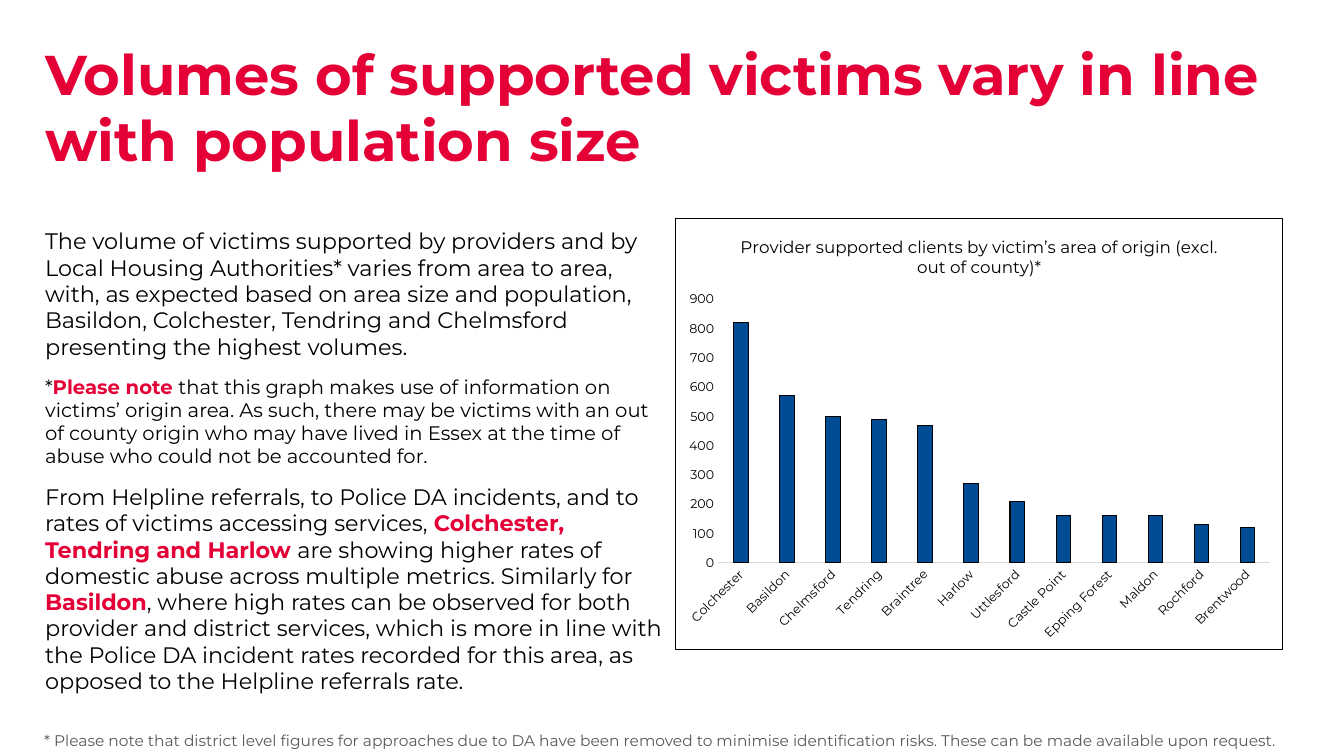
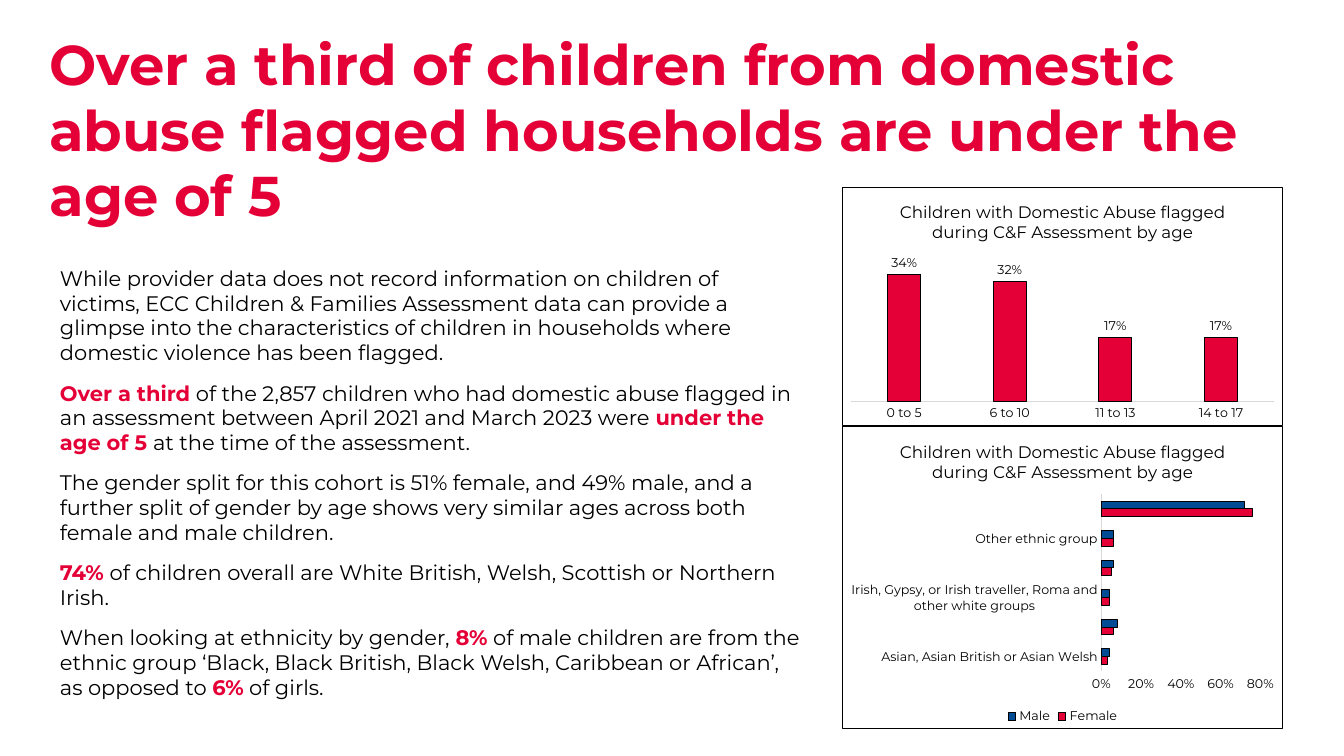
"""Build two slides on supported victims and children, each with text and charts."""
from lxml import etree
from pptx import Presentation
from pptx import util as u
from pptx.chart.data import CategoryChartData
from pptx.dml.color import RGBColor
from pptx.enum import chart as ch
from pptx.enum import text as tx
from pptx.oxml import parse_xml
from pptx.oxml.ns import nsdecls, qn

PX = 9525
RED = RGBColor(0xE4, 0x00, 0x37)
BLUE = RGBColor(0x00, 0x4C, 0x94)
BLACK = RGBColor(0x00, 0x00, 0x00)
GREY = RGBColor(0x59, 0x59, 0x59)
PALE = RGBColor(0xD9, 0xD9, 0xD9)
FONT = "Montserrat"
MARK = "|"

COLUMN = ch.XL_CHART_TYPE.COLUMN_CLUSTERED
BAR = ch.XL_CHART_TYPE.BAR_CLUSTERED
CHILD_TITLE = "Children with Domestic Abuse flagged during C&F Assessment by age"

SLIDES = [
    {
        "title": "Volumes of supported victims vary in line with population size",
        "title_box": (43, 41, 1164, 136),
        "body_box": (43, 218, 593, 238),
        "body_inset": (0, 0),
        "body": [
            (16, "The volume of victims supported by providers and by Local Housing "
                 "Authorities* varies from area to area, with, as expected based on area "
                 "size and population, Basildon, Colchester, Tendring and Chelmsford "
                 "presenting the highest volumes."),
            (14, "*|Please note |that this graph makes use of information on victims’ "
                 "origin area. As such, there may be victims with an out of county origin "
                 "who may have lived in Essex at the time of abuse who could not be "
                 "accounted for."),
            (16, "From Helpline referrals, to Police DA incidents, and to rates of victims "
                 "accessing services, |Colchester, Tendring and Harlow |are showing higher "
                 "rates of domestic abuse across multiple metrics. Similarly for "
                 "|Basildon|, where high rates can be observed for both provider and "
                 "district services, which is more in line with the Police DA incident "
                 "rates recorded for this area, as opposed to the Helpline referrals rate."),
        ],
        "note": "* Please note that district level figures for approaches due to DA have "
                "been removed to minimise identification risks. These can be made available "
                "upon request.",
        "charts": [
            {
                "kind": COLUMN, "box": (643, 208, 579, 411),
                "title": "Provider supported clients by victim’s area of origin (excl. out "
                         "of county)*",
                "categories": ["Colchester", "Basildon", "Chelmsford", "Tendring",
                               "Braintree", "Harlow", "Uttlesford", "Castle Point",
                               "Epping Forest", "Maldon", "Rochford", "Brentwood"],
                "series": [("Clients", BLUE, (820, 570, 500, 490, 470, 270,
                                              210, 160, 160, 160, 130, 120))],
                "format": "General", "gap": 219, "overlap": -27,
                "scale": (900, 100), "axis": True, "labels": False, "legend": False,
            },
        ],
    },
    {
        "title": "Over a third of children from domestic abuse flagged households are "
                 "under the age of 5",
        "title_box": (47, 31, 1210, 189),
        "body_box": (47, 249, 728, 422),
        "body_inset": (10, 5),
        "body": [
            (15, "While provider data does not record information on children of victims, "
                 "ECC Children & Families Assessment data can provide a glimpse into the "
                 "characteristics of children in households where domestic violence has "
                 "been flagged."),
            (15, "|Over a third| of the 2,857 children who had domestic abuse flagged in an "
                 "assessment between April 2021 and March 2023 were |under the age of 5 |at "
                 "the time of the assessment."),
            (15, "The gender split for this cohort is 51% female, and 49% male, and a "
                 "further split of gender by age shows very similar ages across both female "
                 "and male children."),
            (15, "|74% |of children overall are White British, Welsh, Scottish or Northern "
                 "Irish."),
            (15, "When looking at ethnicity by gender, |8%| of male children are from the "
                 "ethnic group ‘Black, Black British, Black Welsh, Caribbean or African’, "
                 "as opposed to |6%| of girls."),
        ],
        "note": None,
        "charts": [
            {
                "kind": COLUMN, "box": (802, 178, 420, 228), "title": CHILD_TITLE,
                "categories": ["0 to 5", "6 to 10", "11 to 13", "14 to 17"],
                "series": [("Children", RED, (0.34, 0.32, 0.17, 0.17))],
                "format": "0%", "gap": 219, "overlap": -27,
                "scale": (0.4, 0.1), "axis": False, "labels": True, "legend": False,
            },
            {
                "kind": BAR, "box": (802, 406, 420, 288), "title": CHILD_TITLE,
                "categories": ["Asian, Asian British or Asian Welsh",
                               "Black, Black British, Black Welsh, Cairbbean or African",
                               "Irish, Gypsy, or Irish traveller, Roma and other white groups",
                               "No Data / Not Recorded", "Other ethnic group",
                               "White English, Welsh, Scottish, Northern Irish or British"],
                "series": [("Female", RED, (0.03, 0.06, 0.04, 0.05, 0.06, 0.76)),
                           ("Male", BLUE, (0.04, 0.08, 0.04, 0.06, 0.06, 0.72))],
                "format": "0%", "gap": 182, "overlap": 0,
                "scale": (0.8, 0.2), "axis": True, "labels": False, "legend": True,
            },
        ],
    },
]
NOTE_BOX = (32, 692, 1225, 28)


def px(values):
    return [value * PX for value in values]


def apply(target, values):
    for name, value in values.items():
        setattr(target, name, value)


def style_font(font, size, color=BLACK, bold=False):
    apply(font, {"name": FONT, "size": u.Pt(size), "bold": bold})
    font.color.rgb = color


def style_line(line, color):
    line.color.rgb = color
    line.width = u.Pt(0.75)


def place(box, bounds, inset=(0, 0)):
    apply(box, dict(zip(("left", "top", "width", "height"), px(bounds))))
    across, down = px(inset)
    apply(box.text_frame, {
        "margin_left": across, "margin_right": across,
        "margin_top": down, "margin_bottom": down, "word_wrap": True,
        "auto_size": tx.MSO_AUTO_SIZE.NONE, "vertical_anchor": tx.MSO_ANCHOR.TOP})


def write(para, content, size, color=BLACK, bold=False, after=0):
    properties = para._p.get_or_add_pPr()
    apply_xml = {"marL": "0", "indent": "0"}
    for name, value in apply_xml.items():
        properties.set(name, value)
    etree.SubElement(properties, qn("a:buNone"))
    apply(para, {"alignment": tx.PP_ALIGN.LEFT, "line_spacing": 0.98,
                 "space_before": u.Pt(0), "space_after": u.Pt(after)})
    for index, part in enumerate(content.split(MARK)):
        if part:
            span = para.add_run()
            span.text = part
            accent = index % 2 == 1
            style_font(span.font, size, RED if accent else color, bold or accent)


def add_chart(page, data):
    source = CategoryChartData(number_format=data["format"])
    source.categories = data["categories"]
    for name, _, values in data["series"]:
        source.add_series(name, values)
    chart = page.shapes.add_chart(data["kind"], *px(data["box"]), source).chart
    style_font(chart.font, 9)
    frame = chart.chart_title.text_frame
    frame.text = data["title"]
    style_font(frame.paragraphs[0].runs[0].font, 12)
    chart.chart_title.include_in_layout = False

    chart.has_legend = data["legend"]
    if data["legend"]:
        apply(chart.legend, {"position": ch.XL_LEGEND_POSITION.BOTTOM,
                             "include_in_layout": False})
        style_font(chart.legend.font, 9)

    for axis in (chart.category_axis, chart.value_axis):
        apply(axis, {"has_major_gridlines": False,
                     "major_tick_mark": ch.XL_TICK_MARK.NONE,
                     "minor_tick_mark": ch.XL_TICK_MARK.NONE})
        style_font(axis.tick_labels.font, 9)
    style_line(chart.category_axis.format.line, PALE)
    top, step = data["scale"]
    apply(chart.value_axis, {"minimum_scale": 0, "maximum_scale": top,
                             "major_unit": step, "visible": data["axis"]})
    chart.value_axis.format.line.fill.background()
    apply(chart.value_axis.tick_labels, {"number_format": data["format"],
                                         "number_format_is_linked": False})

    plot = chart.plots[0]
    apply(plot, {"gap_width": data["gap"], "overlap": data["overlap"],
                 "vary_by_categories": False, "has_data_labels": data["labels"]})
    if data["labels"]:
        apply(plot.data_labels, {"show_value": True, "number_format": data["format"],
                                 "number_format_is_linked": False,
                                 "position": ch.XL_LABEL_POSITION.OUTSIDE_END})
        style_font(plot.data_labels.font, 9)
    for series, (_, color, _) in zip(plot.series, data["series"]):
        series.format.fill.solid()
        series.format.fill.fore_color.rgb = color
        style_line(series.format.line, BLACK)

    border = parse_xml(
        f'<c:spPr {nsdecls("c", "a")}><a:solidFill><a:srgbClr val="FFFFFF"/></a:solidFill>'
        f'<a:ln w="{u.Pt(0.75)}"><a:solidFill><a:srgbClr val="{BLACK}"/></a:solidFill></a:ln>'
        '</c:spPr>')
    chart.element.find(qn("c:chart")).addnext(border)


def add_page(deck, data):
    page = deck.slides.add_slide(deck.slide_layouts[1])
    title, body = page.placeholders
    place(title, data["title_box"])
    write(title.text_frame.paragraphs[0], data["title"], 40, RED, True)
    place(body, data["body_box"], data["body_inset"])
    frame = body.text_frame
    for index, (size, content) in enumerate(data["body"]):
        para = frame.add_paragraph() if index else frame.paragraphs[0]
        write(para, content, size, after=11.3)
    for chart in data["charts"]:
        add_chart(page, chart)
    if data["note"]:
        note = page.shapes.add_textbox(*px(NOTE_BOX))
        place(note, NOTE_BOX, (10, 5))
        write(note.text_frame.paragraphs[0], data["note"], 11, GREY)


def main():
    deck = Presentation()
    deck.slide_width, deck.slide_height = px((1280, 720))
    for data in SLIDES:
        add_page(deck, data)
    deck.save("out.pptx")


if __name__ == "__main__":
    main()
